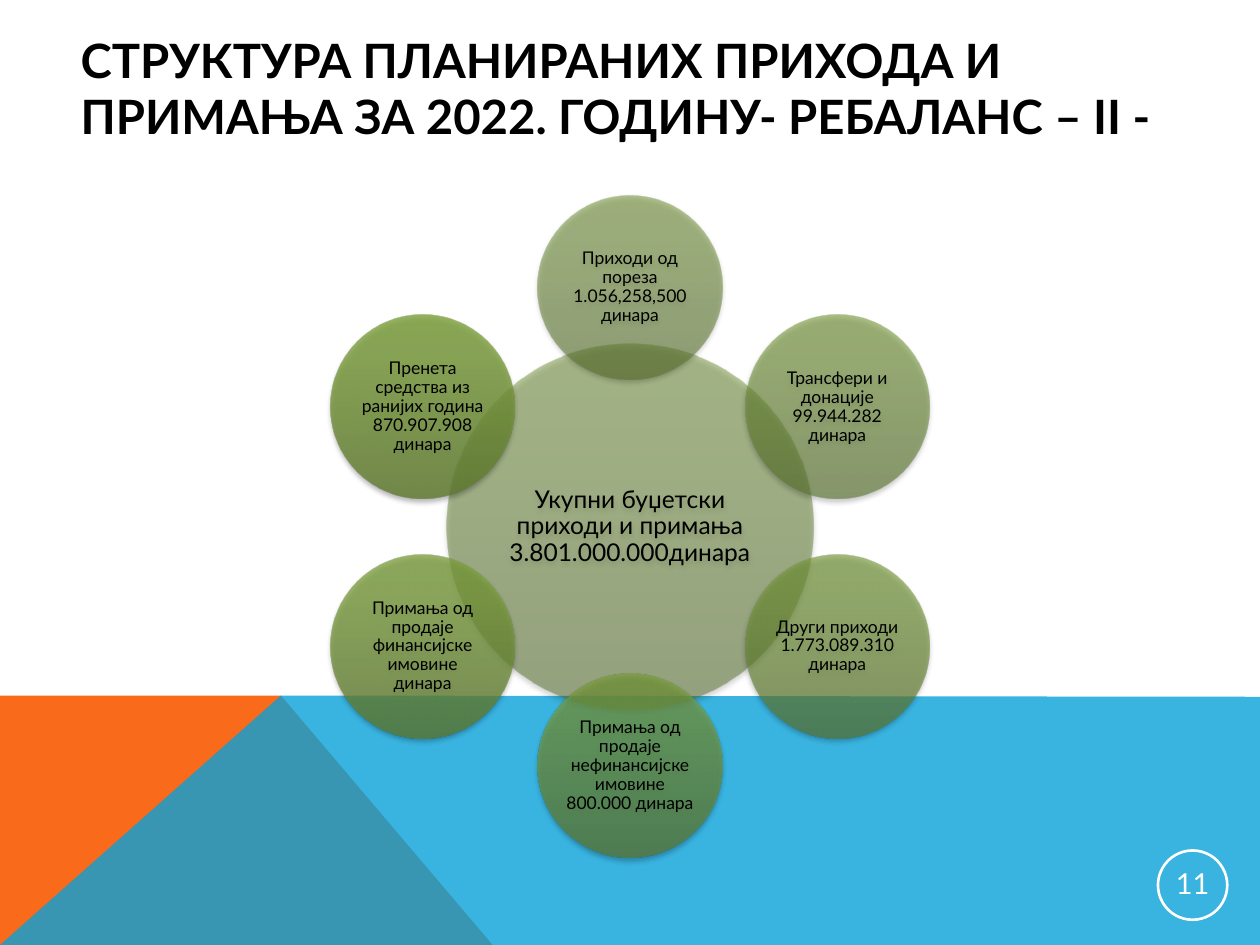
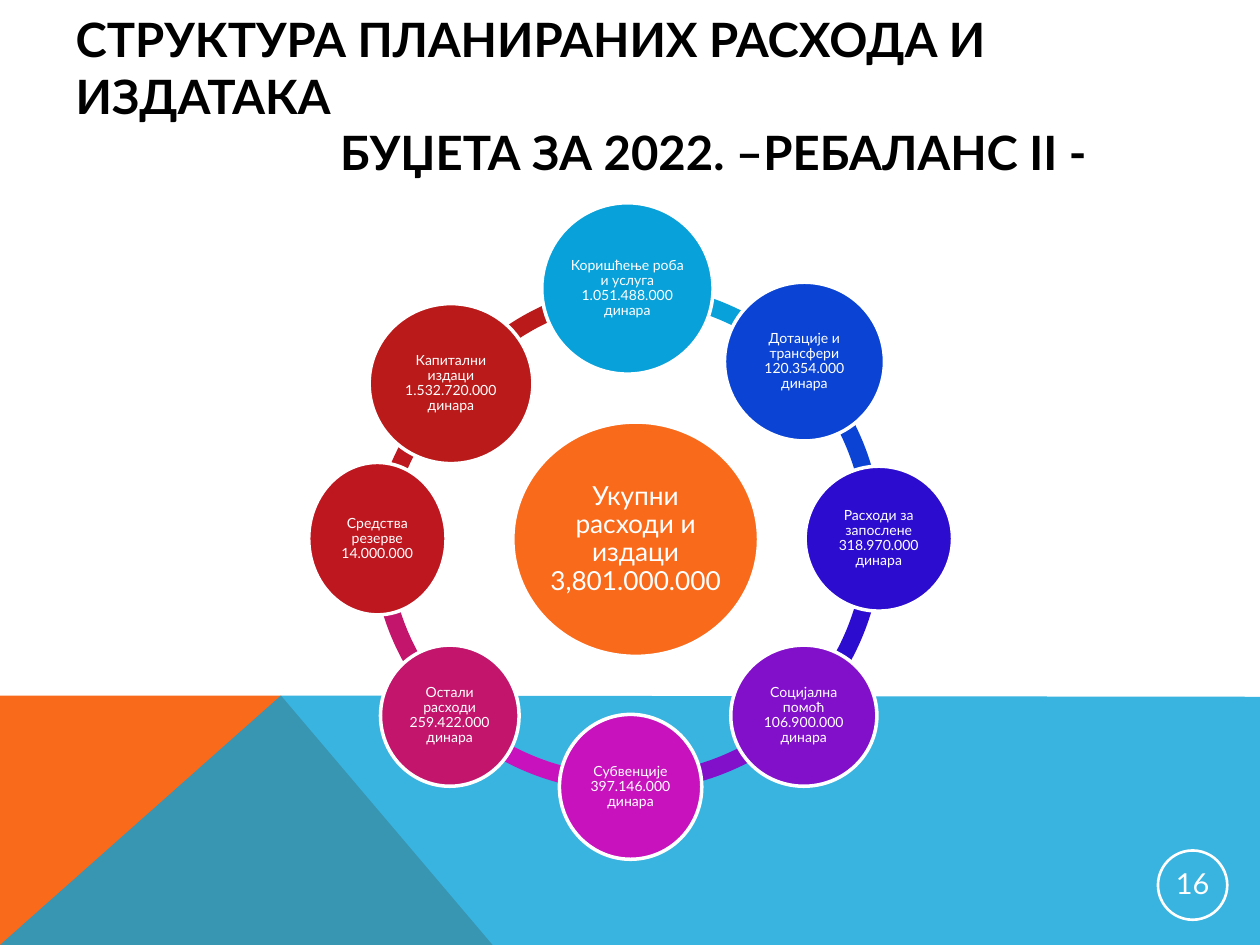
"""Build two budget slides: planned revenues and planned expenditures for 2022."""
from math import cos, radians, sin

from lxml import etree
from pptx import Presentation
from pptx.dml.color import RGBColor
from pptx.enum.shapes import MSO_SHAPE
from pptx.enum.text import MSO_ANCHOR, MSO_AUTO_SIZE, PP_ALIGN
from pptx.oxml import parse_xml
from pptx.oxml.ns import nsdecls, qn
from pptx.util import Inches, Pt

OVAL, BLOCK_ARC = MSO_SHAPE.OVAL, MSO_SHAPE.BLOCK_ARC
MIDDLE, LEFT, CENTER = MSO_ANCHOR.MIDDLE, PP_ALIGN.LEFT, PP_ALIGN.CENTER
NO_AUTOFIT = MSO_AUTO_SIZE.NONE
FONT = "Lato"
WHITE, BLACK, ORANGE, BLUE = "FFFFFF", "000000", "F96A1B", "08A1D9"


def rgb(color):
    return RGBColor.from_string(color)


def add_circle(s, x, y, w, h, text, size, color, fill=None, line=None):
    sp = s.shapes.add_shape(OVAL, Inches(x), Inches(y), Inches(w), Inches(h))
    sp.shadow.inherit = False
    if fill:
        sp.fill.solid()
        sp.fill.fore_color.rgb = rgb(fill)
    else:
        sp.fill.background()
    if line:
        sp.line.color.rgb = rgb(WHITE)
        sp.line.width = Pt(line)
    else:
        sp.line.fill.background()
    tf = sp.text_frame
    tf.word_wrap = True
    tf.vertical_anchor = MIDDLE
    tf.margin_left = tf.margin_right = tf.margin_top = tf.margin_bottom = Inches(0.01)
    tf.text = text
    p = tf.paragraphs[0]
    p.alignment = CENTER
    p.line_spacing = 0.9
    font = p.runs[0].font
    font.name, font.size, font.color.rgb = FONT, Pt(size), rgb(color)
    return sp


prs = Presentation()
prs.slide_width, prs.slide_height = Inches(10), Inches(7.5)
layout = prs.slide_layouts[5]

pages = [
    ("11", (0.54, 0.27, 9, 0.85),
     ["СТРУКТУРА ПЛАНИРАНИХ ПРИХОДА И ПРИМАЊА ЗА 2022. ГОДИНУ- РЕБАЛАНС – II -"]),
    ("16", (0.5, 0.29, 9, 0.93),
     ["СТРУКТУРА ПЛАНИРАНИХ РАСХОДА И ИЗДАТАКА",
      "БУЏЕТА ЗА 2022. –РЕБАЛАНС II -"]),
]
for number, box, lines in pages:
    s = prs.slides.add_slide(layout)
    title = s.shapes.title
    title.left, title.top, title.width, title.height = [Inches(v) for v in box]
    tf = title.text_frame
    tf.text = "\n".join(lines)
    tf.word_wrap = True
    tf.auto_size = NO_AUTOFIT
    tf.vertical_anchor = MIDDLE
    for i, p in enumerate(tf.paragraphs):
        p.alignment = LEFT
        if i:
            p._p.get_or_add_pPr().set("marL", str(Inches(2.1)))
        font = p.runs[0].font
        font.name, font.size, font.bold = FONT, Pt(27), True
        font.color.rgb = rgb(BLACK)
    add_circle(s, 9.19, 6.75, 0.55, 0.55, number, 16.5, WHITE, line=1.5)

revenue, expenses = prs.slides

bands = [
    (ORANGE, 100, [(0, 5.52), (2.23, 5.52), (3.91, 7.5)]),
    (BLUE, 80, [(2.23, 5.52), (10, 5.53), (10, 7.5)]),
]
for color, alpha, points in bands:
    builder = revenue.shapes.build_freeform(0, Inches(7.5))
    builder.add_line_segments([(Inches(x), Inches(y)) for x, y in points])
    band = builder.convert_to_shape()
    band.shadow.inherit = False
    band.line.fill.background()
    band.fill.solid()
    band.fill.fore_color.rgb = rgb(color)
    clr = band._element.spPr.find(".//" + qn("a:srgbClr"))
    etree.SubElement(clr, qn("a:alpha"), val=str(alpha * 1000))
    layout.shapes._spTree.append(band._element)

CX, CY, RING = 5, 4.18, 1.9
revenues = [
    ("Укупни буџетски приходи и примања 3.801.000.000динара",
     ("566F2A", "709037", "719235")),
    ("Приходи од пореза 1.056,258,500 динара", ("58712B", "729238", "739536")),
    ("Трансфери и донације 99.944.282 динара", ("59732C", "749539", "759837")),
    ("Други приходи 1.773.089.310 динара", ("5B752D", "76983A", "779A39")),
    ("Примања од продаје нефинансијске имовине 800.000 динара",
     ("5C772E", "789A3B", "799D3A")),
    ("Примања од продаје финансијске имовине динара",
     ("5E792E", "7A9D3C", "7B9F3B")),
    ("Пренета средства из ранијих година 870.907.908 динара",
     ("607B2F", "7C9F3D", "7DA23C")),
]
for i, (text, colors) in enumerate(revenues):
    d, size, ring = (1.46, 10, RING) if i else (2.91, 14, 0)
    angle = radians(60 * i - 150)
    x, y = CX + ring * cos(angle) - d / 2, CY + ring * sin(angle) - d / 2
    sp = add_circle(revenue, x, y, d, d, text, size, BLACK)
    spPr = sp._element.spPr
    stops = "".join(
        f'<a:gs pos="{pos}000"><a:srgbClr val="{color}">'
        f'<a:alpha val="{50 + 5 * i}000"/></a:srgbClr></a:gs>'
        for pos, color in zip((0, 80, 100), colors))
    gradient = parse_xml(
        f'<a:gradFill {nsdecls("a")} rotWithShape="1"><a:gsLst>{stops}</a:gsLst>'
        '<a:lin ang="16200000" scaled="0"/></a:gradFill>')
    spPr.replace(spPr.find(qn("a:noFill")), gradient)
    shadow = etree.SubElement(
        spPr.find(qn("a:effectLst")), qn("a:outerShdw"), blurRad=str(Pt(3.1)),
        dist=str(Pt(1.8)), dir="5400000", rotWithShape="0")
    clr = etree.SubElement(shadow, qn("a:srgbClr"), val=BLACK)
    etree.SubElement(clr, qn("a:alpha"), val="35000")

ARC_SIZE, ARC_WIDTH = 4.05, 3.4 / 100
costs = [
    ("Капитални издаци 1.532.720.000 динара", "BA1A19",
     (2.93, 2.41, 1.3, 1.27), (3.13, 2.24, 217.8, 264.9)),
    ("Средства резерве 14.000.000", "BE1720",
     (2.45, 3.67, 1.09, 1.21), (2.94, 2.45, 185.8, 225.9)),
    ("Остали расходи 259.422.000 динара", "C2156B",
     (3.02, 5.12, 1.1, 1.12), (2.95, 2.25, 135, 180)),
    ("Субвенције 397.146.000 динара", "C712BD",
     (4.44, 5.67, 1.13, 1.15), (2.93, 2.23, 88.5, 134.1)),
    ("Социјална помоћ 106.900.000 динара", "8210CB",
     (5.8, 5.12, 1.16, 1.12), (2.98, 2.23, 45.9, 89.8)),
    ("Расходи за запослене 318.970.000 динара", "2C0DD0",
     (6.39, 3.7, 1.17, 1.15), (2.95, 2.25, 0, 45)),
    ("Дотације и трансфери 120.354.000 динара", "0B44D4",
     (5.75, 2.24, 1.27, 1.26), (2.95, 2.25, 315, 0)),
    ("Коришћење роба и услуга 1.051.488.000 динара", BLUE,
     (4.3, 1.61, 1.36, 1.36), (2.95, 2.25, 270, 315)),
]
for text, color, box, (x, y, start, end) in costs:
    arc = expenses.shapes.add_shape(
        BLOCK_ARC, Inches(x), Inches(y), Inches(ARC_SIZE), Inches(ARC_SIZE))
    arc.shadow.inherit = False
    arc.fill.solid()
    arc.fill.fore_color.rgb = rgb(color)
    arc.line.fill.background()
    arc.adjustments[0] = start * 0.6
    arc.adjustments[1] = end * 0.6
    arc.adjustments[2] = ARC_WIDTH

add_circle(expenses, 4.07, 3.35, 1.95, 1.86,
           "Укупни расходи и издаци 3,801.000.000", 15, WHITE, ORANGE, 2)
for text, color, box, arc in reversed(costs):
    add_circle(expenses, *box, text, 8, WHITE, color, 2)

prs.save("out.pptx")
